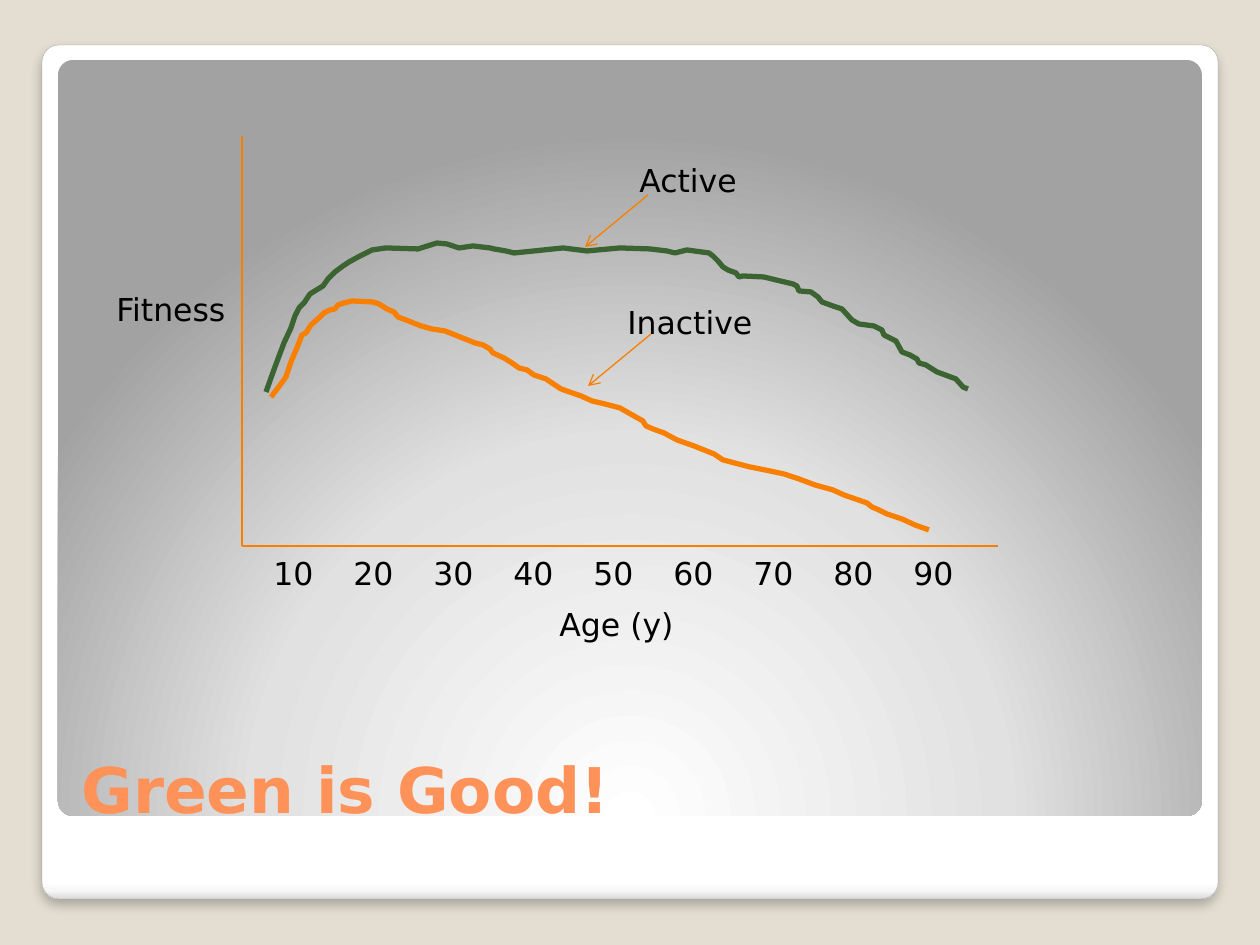
from lxml import etree
from pptx import Presentation
from pptx import util as u
from pptx.dml.color import RGBColor
from pptx.enum import shapes, text
from pptx.oxml import ns

PX = u.Inches(1) / 126
FONT = "DejaVu Sans"
BEIGE = RGBColor(0xE3, 0xDE, 0xD1)
EDGE = RGBColor(0xA4, 0xA4, 0xA4)
ORANGE = RGBColor(0xF9, 0x7F, 0x00)
GREEN = RGBColor(0x3B, 0x64, 0x32)
CORAL = RGBColor(0xFF, 0x92, 0x58)
BLACK = RGBColor(0, 0, 0)

CARD_STOPS = [(0, "FFFFFF"), (98, "FFFFFF"), (99, "F7F7F7"), (100, "DADADA")]
PANEL_STOPS = [(0, "FFFFFF"), (55, "E1E1E1"), (100, "A2A2A2")]

INACTIVE = [
    (29, 261), (36, 252), (44, 241), (49, 226), (57, 207), (60, 199), (64, 197),
    (69, 189), (77, 182), (82, 177), (88, 174), (93, 173), (96, 169), (102, 167),
    (110, 165), (131, 166), (137, 168), (145, 173), (152, 176), (156, 181),
    (164, 184), (179, 190), (190, 193), (203, 195), (233, 207), (241, 209),
    (248, 213), (251, 217), (262, 222), (270, 227), (277, 232), (285, 234),
    (292, 239), (304, 243), (319, 253), (339, 260), (350, 265), (363, 268),
    (378, 272), (385, 276), (401, 285), (404, 290), (411, 293), (422, 297),
    (435, 304), (452, 310), (472, 318), (481, 324), (508, 331), (523, 334),
    (542, 338), (557, 343), (573, 349), (591, 354), (602, 359), (625, 367),
    (630, 371), (637, 374), (645, 378), (660, 383), (673, 389), (687, 394)]
ACTIVE = [
    (24, 256), (29, 242), (33, 231), (36, 223), (42, 207), (49, 192), (53, 180),
    (57, 172), (62, 167), (68, 158), (81, 150), (86, 143), (93, 136), (101, 130),
    (107, 126), (118, 120), (130, 114), (144, 112), (176, 113), (195, 107),
    (205, 108), (217, 112), (231, 110), (248, 112), (252, 113), (264, 115),
    (272, 117), (292, 115), (321, 112), (345, 115), (378, 112), (408, 113),
    (425, 115), (433, 117), (445, 114), (467, 117), (471, 120), (476, 125),
    (481, 131), (486, 134), (494, 137), (497, 141), (501, 140), (522, 141),
    (534, 144), (551, 148), (555, 150), (557, 155), (569, 156), (576, 161),
    (580, 166), (591, 170), (600, 173), (610, 184), (617, 188), (632, 190),
    (640, 194), (642, 199), (654, 205), (660, 216), (668, 219), (675, 223),
    (677, 227), (684, 229), (695, 236), (714, 243), (721, 251), (726, 253)]


def px(length):
    """Turn a length in px into EMU."""
    return u.Emu(round(length * PX))


def node(parent, tag, **attributes):
    """Add a drawing element below parent."""
    child = etree.SubElement(parent, ns.qn(tag))
    for name, value in attributes.items():
        child.set(name, str(value))
    return child


def add_card(page, box, stops):
    """Add a rounded rectangle with gradient stops and return it with its gradient."""
    card = page.shapes.add_shape(
        shapes.MSO_SHAPE.ROUNDED_RECTANGLE, *map(px, box))
    card.adjustments[0] = 0.02
    card.shadow.inherit = False
    card.line.fill.background()
    card.fill.gradient()
    gradient = card._element.spPr.find(ns.qn("a:gradFill"))
    for child in list(gradient):
        gradient.remove(child)
    stop_list = node(gradient, "a:gsLst")
    for place, colour in stops:
        stop = node(stop_list, "a:gs", pos=place * 1000)
        node(stop, "a:srgbClr", val=colour)
    return card, gradient


def add_frame(page, box):
    """Draw the white card with its shadow and the grey panel inside it."""
    left, top, width, height = box
    card, gradient = add_card(page, box, CARD_STOPS)
    node(gradient, "a:lin", ang=90 * 60000, scaled=0)
    card.line.color.rgb = EDGE
    card.line.width = u.Pt(0.16)
    effects = card._element.spPr.find(ns.qn("a:effectLst"))
    shadow = node(effects, "a:outerShdw", blurRad=u.Pt(6), dist=u.Pt(4),
                  dir=90 * 60000, algn="t", rotWithShape=0)
    node(node(shadow, "a:srgbClr", val="000000"), "a:alpha", val=25000)
    panel, gradient = add_card(
        page, (left + 16, top + 15, width - 32, 756), PANEL_STOPS)
    circle = node(gradient, "a:path", path="circle")
    node(circle, "a:fillToRect", l=50000, t=175000, r=50000, b=-75000)


def add_label(page, box, words, size=18, colour=BLACK, wrap=False):
    """Add one line of text, in a box that grows unless it wraps, and return its frame."""
    frame = page.shapes.add_textbox(*map(px, box)).text_frame
    frame.word_wrap = wrap
    if not wrap:
        frame.auto_size = text.MSO_AUTO_SIZE.SHAPE_TO_FIT_TEXT
    para = frame.paragraphs[0]
    para.text = words
    para.font.name = FONT
    para.font.size = u.Pt(size)
    para.font.color.rgb = colour
    return frame


def add_line(page, start, end, arrow=False):
    """Add a thin orange line, with an arrowhead at its end if asked."""
    line = page.shapes.add_connector(
        shapes.MSO_CONNECTOR.STRAIGHT, *map(px, start + end))
    line.line.color.rgb = ORANGE
    line.line.width = u.Pt(0.75)
    properties = line._element.spPr
    if arrow:
        node(properties.find(ns.qn("a:ln")), "a:tailEnd", type="arrow")
    node(properties, "a:effectLst")


def add_curve(page, left, top, points, colour):
    """Draw an open curve through points measured from the plot corner."""
    builder = page.shapes.build_freeform(*points[0], scale=PX)
    builder.add_line_segments(points[1:], close=False)
    curve = builder.convert_to_shape(px(left), px(top))
    curve.shadow.inherit = False
    curve.fill.background()
    curve.line.color.rgb = colour
    curve.line.width = u.Pt(3)


def add_plot(page, box):
    """Draw the axes, their labels, both fitness curves and their callouts."""
    left, top, width, height = box
    bottom = top + height
    add_line(page, (left, top), (left, bottom))
    add_line(page, (left, bottom), (left + width, bottom))
    ages = range(10, 100, 10)
    ticks = add_label(page, (left + 19, bottom + 2, 752, 50),
                      "\t".join(map(str, ages)), wrap=True)
    properties = ticks.paragraphs[0]._p.get_or_add_pPr()
    tabs = etree.Element(ns.qn("a:tabLst"))
    for step in range(1, len(ages)):
        node(tabs, "a:tab", pos=px(80 * step), algn="l")
    properties.insert(0, tabs)
    add_label(page, (left + 305, bottom + 53, 145, 50), "Age (y)")
    add_label(page, (left - 138, top + 148, 138, 50), "Fitness")
    add_curve(page, left, top, INACTIVE, ORANGE)
    add_curve(page, left, top, ACTIVE, GREEN)
    callouts = [("Active", (385, 19, 126), (406, 59)),
                ("Inactive", (373, 161, 156), (409, 198))]
    for words, (x, y, label_width), (tail_x, tail_y) in callouts:
        start = (left + tail_x, top + tail_y)
        add_line(page, start, (start[0] - 63, start[1] + 52), arrow=True)
        add_label(page, (left + x, top + y, label_width, 50), words)


def add_title(page, box):
    """Set the bold title at the bottom of its box."""
    frame = add_label(page, box, "Green is Good!", 36, CORAL, wrap=True)
    frame.vertical_anchor = text.MSO_ANCHOR.BOTTOM
    frame.paragraphs[0].font.bold = True


def main():
    """Build the deck and save it."""
    deck = Presentation()
    deck.slide_width, deck.slide_height = px(1260), px(945)
    page = deck.slides.add_slide(deck.slide_layouts[6])
    page.background.fill.solid()
    page.background.fill.fore_color.rgb = BEIGE
    add_frame(page, (42, 45, 1176, 854))
    add_title(page, (69, 687, 1128, 145))
    add_plot(page, (242, 136, 756, 410))
    deck.save("out.pptx")


if __name__ == "__main__":
    main()
